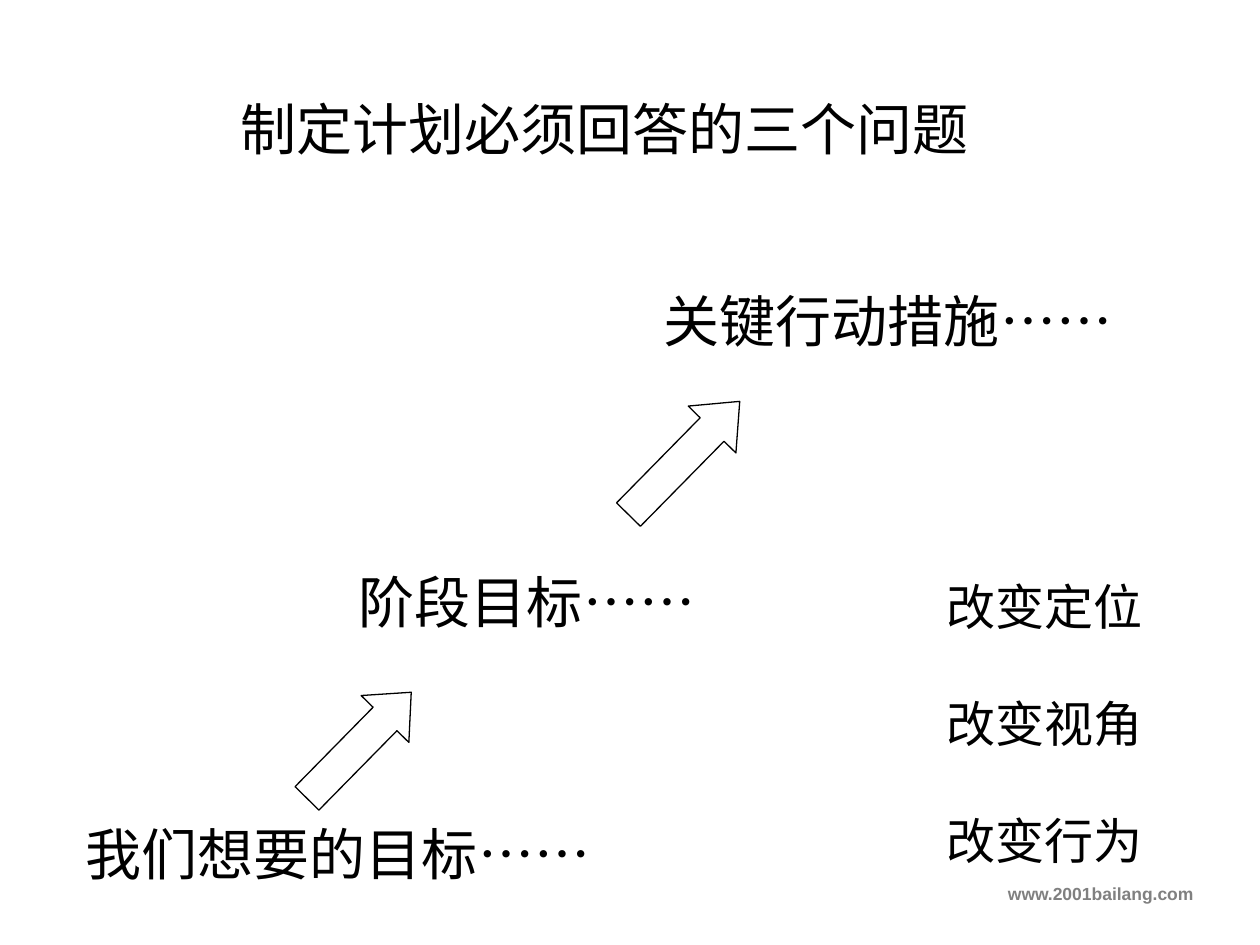
from lxml import etree
from pptx import Presentation
from pptx.dml.color import RGBColor
from pptx.enum.shapes import MSO_SHAPE
from pptx.enum.text import MSO_ANCHOR, MSO_AUTO_SIZE, PP_ALIGN
from pptx.oxml.ns import qn
from pptx.util import Pt

RIGHT_ARROW = MSO_SHAPE.RIGHT_ARROW
TOP = MSO_ANCHOR.TOP
NO_AUTOFIT = MSO_AUTO_SIZE.NONE
LEFT, CENTER, RIGHT, JUSTIFY = PP_ALIGN.LEFT, PP_ALIGN.CENTER, PP_ALIGN.RIGHT, PP_ALIGN.JUSTIFY

THEME = {
    "ink": RGBColor(0, 0, 0),
    "paper": RGBColor(255, 255, 255),
    "muted": RGBColor(128, 128, 128),
    "heading_size": Pt(32),
    "list_size": Pt(28),
    "footer_size": Pt(10),
    "chinese": "Noto Sans CJK SC",
    "latin": "Arial",
    "ellipsis": "Times New Roman",
}


def prepare_box(shape, box, wrap):
    shape.left, shape.top, shape.width, shape.height = map(Pt, box)
    frame = shape.text_frame
    settings = {
        "word_wrap": wrap, "auto_size": NO_AUTOFIT, "vertical_anchor": TOP,
        "margin_left": Pt(7.2), "margin_right": Pt(7.2),
        "margin_top": Pt(3.6), "margin_bottom": Pt(3.6),
    }
    for name, value in settings.items():
        setattr(frame, name, value)
    return frame


def add_text(paragraph, text, font_name, size, color, bold=False):
    run = paragraph.add_run()
    run.text = text
    for name, value in {"name": font_name, "size": size, "bold": bold}.items():
        setattr(run.font, name, value)
    run.font.color.rgb = color
    east_asian = etree.SubElement(run.font._element, qn("a:ea"))
    east_asian.set("typeface", THEME["chinese"])


presentation = Presentation()
presentation.slide_width = Pt(720)
presentation.slide_height = Pt(540)
slide = presentation.slides.add_slide(presentation.slide_layouts[1])
slide.background.fill.solid()
slide.background.fill.fore_color.rgb = THEME["paper"]

title = prepare_box(slide.shapes.title, (127.5, 54.7, 436.3, 38.2), False).paragraphs[0]
for name, value in {"alignment": CENTER, "line_spacing": Pt(34)}.items():
    setattr(title, name, value)
add_text(title, "制定计划必须回答的三个问题", THEME["latin"], THEME["heading_size"], THEME["ink"])

changes = prepare_box(slide.placeholders[1], (533.5, 323.3, 126.7, 175.7), False)
for index, text in enumerate(["改变定位", "改变视角", "改变行为"]):
    paragraph = changes.add_paragraph() if index else changes.paragraphs[0]
    spacing = {
        "alignment": LEFT, "line_spacing": Pt(36),
        "space_before": Pt(31 if index else 0), "space_after": Pt(0),
    }
    for name, value in spacing.items():
        setattr(paragraph, name, value)
    properties = paragraph._p.get_or_add_pPr()
    properties.set("marL", "0")
    properties.set("indent", "0")
    etree.SubElement(properties, qn("a:buNone"))
    add_text(paragraph, text, THEME["latin"], THEME["list_size"], THEME["ink"])

steps = [
    ("我们想要的目标", (41.8, 461.5, 390.2, 72), JUSTIFY),
    ("阶段目标", (198, 317.5, 288, 90.7), JUSTIFY),
    ("关键行动措施", (372.2, 157, 318.2, 59.8), LEFT),
]
for text, box, alignment in steps:
    frame = prepare_box(slide.shapes.add_textbox(0, 0, 0, 0), box, True)
    paragraph = frame.paragraphs[0]
    paragraph.alignment = alignment
    paragraph.line_spacing = Pt(41.5)
    add_text(paragraph, text, THEME["chinese"], THEME["heading_size"], THEME["ink"])
    add_text(paragraph, "……", THEME["ellipsis"], THEME["heading_size"], THEME["ink"])

for left, top, width, head in [(162.7, 406.8, 85, 0.56), (345.6, 242.6, 90.7, 0.59)]:
    arrow = slide.shapes.add_shape(RIGHT_ARROW, Pt(left), Pt(top), Pt(width), Pt(38.2))
    arrow.rotation = 314.5
    arrow.adjustments[0] = 0.5
    arrow.adjustments[1] = head
    arrow.shadow.inherit = False
    arrow.fill.solid()
    arrow.fill.fore_color.rgb = THEME["paper"]
    arrow.line.color.rgb = THEME["ink"]
    arrow.line.width = Pt(0.75)

footer = prepare_box(slide.shapes.add_textbox(0, 0, 0, 0), (0, 501.1, 689, 25.2), True).paragraphs[0]
footer.alignment = RIGHT
add_text(footer, "www.2001bailang.com", THEME["latin"], THEME["footer_size"], THEME["muted"], True)

presentation.save("out.pptx")
